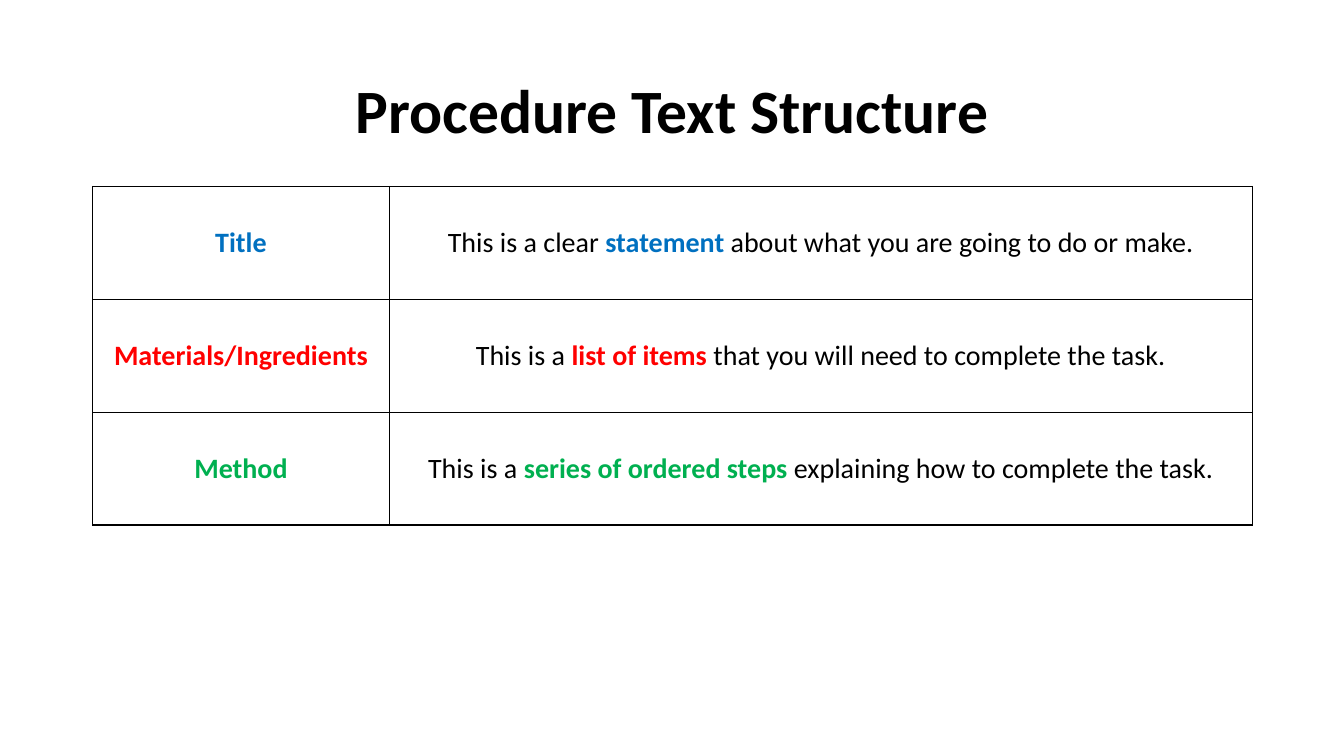
from dataclasses import dataclass

from lxml.etree import SubElement
from pptx import Presentation
from pptx.dml.color import RGBColor
from pptx.enum.text import MSO_ANCHOR, PP_ALIGN
from pptx.oxml.ns import qn
from pptx.util import Inches, Pt


@dataclass(frozen=True)
class Theme:
    font: str = "Calibri"
    title_size: int = 44
    body_size: int = 20
    border_width: int = 1
    ink: str = "000000"
    paper: str = "FFFFFF"
    blue: str = "0070C0"
    red: str = "FF0000"
    green: str = "00B050"


THEME = Theme()

STRUCTURE = [
    ("Title", THEME.blue,
     ("This is a clear ", "statement", " about what you are going to do or make.")),
    ("Materials/Ingredients", THEME.red,
     ("This is a ", "list of items ", "that you will need to complete the task.")),
    ("Method", THEME.green,
     ("This is a ", "series of ordered steps ", "explaining how to complete the task.")),
]


def add_span(para, text, size=THEME.body_size, color=THEME.ink, bold=False):
    para.alignment = PP_ALIGN.CENTER
    span = para.add_run()
    span.text = text
    span.font.name = THEME.font
    span.font.size = Pt(size)
    span.font.bold = bold
    span.font.color.rgb = RGBColor.from_string(color)


def style_cell(cell):
    cell.vertical_anchor = MSO_ANCHOR.MIDDLE
    properties = cell._tc.get_or_add_tcPr()
    for side in ("lnL", "lnR", "lnT", "lnB"):
        line = SubElement(properties, qn(f"a:{side}"), w=str(Pt(THEME.border_width)))
        fill = SubElement(line, qn("a:solidFill"))
        SubElement(fill, qn("a:srgbClr"), val=THEME.ink)
    cell.fill.solid()
    cell.fill.fore_color.rgb = RGBColor.from_string(THEME.paper)


def add_title(page, text, left, top, width, height):
    box = page.shapes.add_textbox(Inches(left), Inches(top), Inches(width), Inches(height))
    frame = box.text_frame
    frame.word_wrap = True
    frame.vertical_anchor = MSO_ANCHOR.MIDDLE
    para = frame.paragraphs[0]
    para.line_spacing = 0.9
    add_span(para, text, size=THEME.title_size, bold=True)


def add_structure_table(page, entries, left, top, width, height, label_width):
    table = page.shapes.add_table(
        len(entries), 2, Inches(left), Inches(top), Inches(width), Inches(height)
    ).table
    table.columns[0].width = Inches(label_width)
    table.columns[1].width = Inches(width - label_width)
    for row, (label, color, (before, key, after)) in enumerate(entries):
        label_cell, text_cell = table.cell(row, 0), table.cell(row, 1)
        style_cell(label_cell)
        style_cell(text_cell)
        add_span(label_cell.text_frame.paragraphs[0], label, color=color, bold=True)
        para = text_cell.text_frame.paragraphs[0]
        add_span(para, before)
        add_span(para, key, color=color, bold=True)
        add_span(para, after)


def main():
    deck = Presentation()
    deck.slide_width = Inches(13.33)
    deck.slide_height = Inches(7.5)
    page = deck.slides.add_slide(deck.slide_layouts[6])
    left, width = 0.92, 11.5
    add_title(page, "Procedure Text Structure", left, 0.4, width, 1.45)
    add_structure_table(page, STRUCTURE, left, 1.85, width, 3.36, label_width=2.94)
    deck.save("out.pptx")


if __name__ == "__main__":
    main()
